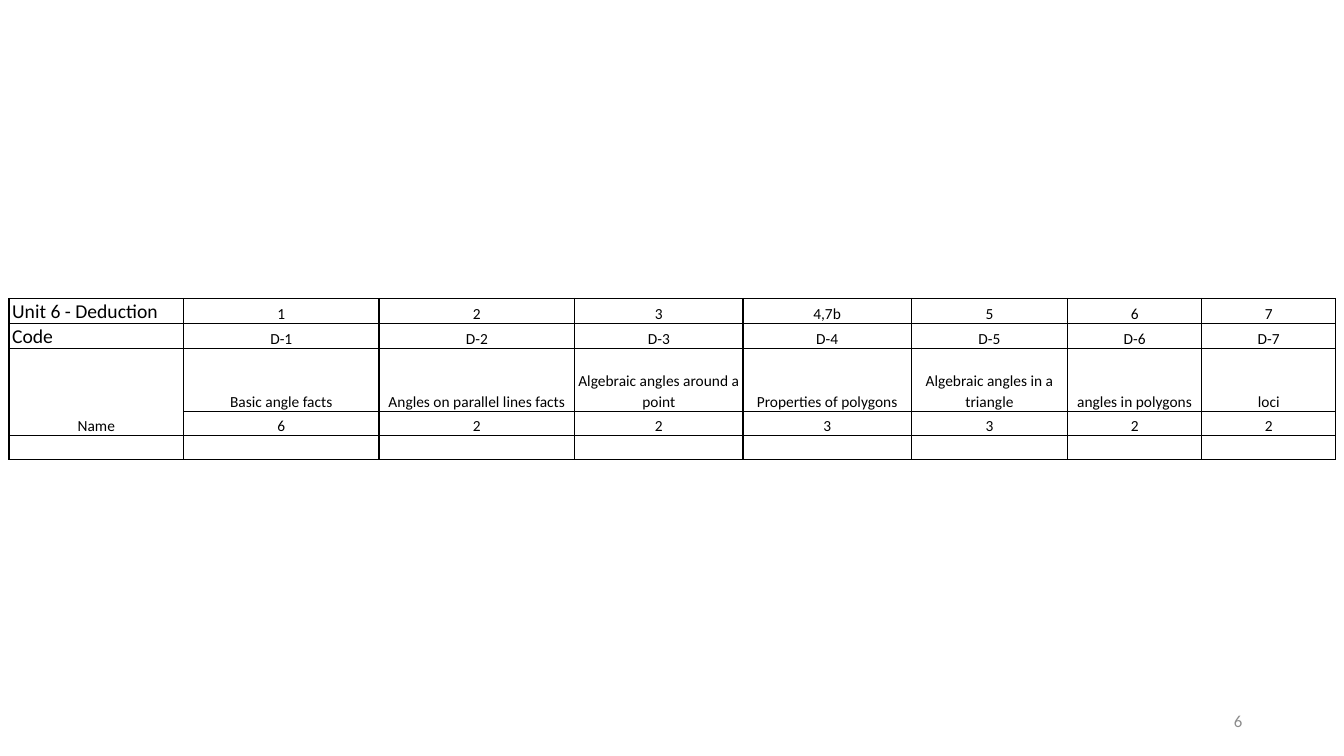
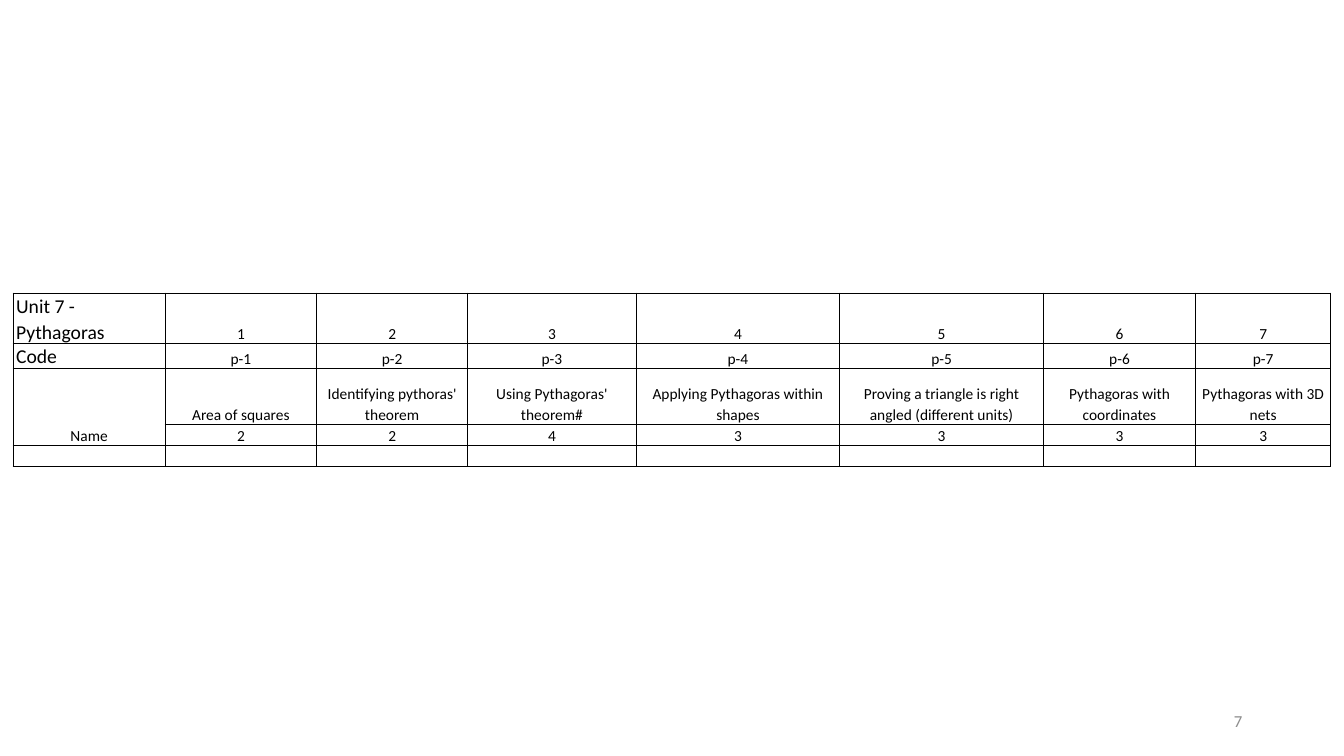
from lxml import etree
from pptx import Presentation
from pptx.dml.color import RGBColor
from pptx.enum.text import MSO_ANCHOR, PP_ALIGN
from pptx.oxml.ns import qn
from pptx.util import Inches, Pt

BLACK = RGBColor(0x00, 0x00, 0x00)
GREY = RGBColor(0x8C, 0x8C, 0x8C)
FONT = "Calibri"
LEFT, CENTER, RIGHT = PP_ALIGN.LEFT, PP_ALIGN.CENTER, PP_ALIGN.RIGHT
MIDDLE, BOTTOM = MSO_ANCHOR.MIDDLE, MSO_ANCHOR.BOTTOM
BORDER_SIDES = ("a:lnL", "a:lnR", "a:lnT", "a:lnB")
NAME_ROW = 2

UNITS = [
    {
        "page": 6, "at": (0.09, 2.96), "title": "Unit 6 - Deduction", "prefix": "D",
        "widths": [1.73, 1.94, 1.94, 1.67, 1.67, 1.55, 1.33, 1.33],
        "heights": [0.24, 0.24, 0.62, 0.24, 0.24],
        "lessons": ["1", "2", "3", "4,7b", "5", "6", "7"],
        "topics": [
            ("Basic angle facts", 6),
            ("Angles on parallel lines facts", 2),
            ("Algebraic angles around a point", 2),
            ("Properties of polygons", 3),
            ("Algebraic angles in a triangle", 3),
            ("angles in polygons", 2),
            ("loci", 2),
        ],
    },
    {
        "page": 7, "at": (0.13, 2.91), "title": "Unit 7 - Pythagoras", "prefix": "p",
        "widths": [1.51, 1.5, 1.5, 1.67, 2.02, 2.02, 1.51, 1.34],
        "heights": [0.21, 0.23, 0.55, 0.21, 0.21],
        "lessons": ["1", "2", "3", "4", "5", "6", "7"],
        "topics": [
            ("Area of squares", 2),
            ("Identifying pythoras' theorem", 2),
            ("Using Pythagoras' theorem#", 4),
            ("Applying Pythagoras within shapes", 3),
            ("Proving a triangle is right angled (different units)", 3),
            ("Pythagoras with coordinates", 3),
            ("Pythagoras with 3D nets", 3),
        ],
    },
]


class Deck:
    def __init__(self):
        self.prs = Presentation()
        self.prs.slide_width, self.prs.slide_height = Inches(13.33), Inches(7.5)
        self.s = None

    def add_slide(self):
        self.s = self.prs.slides.add_slide(self.prs.slide_layouts[6])

    def style(self, p, size, color, align):
        p.alignment = align
        p.font.name = FONT
        p.font.size = Pt(size)
        p.font.color.rgb = color

    def page_number(self, number):
        sp = self.s.shapes.add_textbox(Inches(9.42), Inches(6.95), Inches(3), Inches(0.4))
        tf = sp.text_frame
        tf.word_wrap = True
        tf.vertical_anchor = MIDDLE
        tf.text = str(number)
        self.style(tf.paragraphs[0], 12, GREY, RIGHT)

    def borders(self, cell):
        tc_pr = cell._tc.get_or_add_tcPr()
        for i, side in enumerate(BORDER_SIDES):
            ln = etree.Element(qn(side), w=str(Pt(1)))
            fill = etree.SubElement(ln, qn("a:solidFill"))
            etree.SubElement(fill, qn("a:srgbClr"), val=str(BLACK))
            tc_pr.insert(i, ln)

    def cell(self, cell, text, heading):
        cell.fill.background()
        cell.margin_left = cell.margin_right = Inches(0.03)
        cell.margin_top = cell.margin_bottom = 0
        cell.vertical_anchor = BOTTOM
        cell.text = text
        p = cell.text_frame.paragraphs[0]
        p.line_spacing = 1.07
        self.style(p, 14 if heading else 11, BLACK, LEFT if heading else CENTER)
        self.borders(cell)

    def table(self, at, widths, heights, rows):
        left, top = at
        table = self.s.shapes.add_table(
            len(heights), len(widths), Inches(left), Inches(top),
            Inches(sum(widths)), Inches(sum(heights))).table
        table.first_row = table.horz_banding = False
        for column, width in zip(table.columns, widths):
            column.width = Inches(width)
        for row, height in zip(table.rows, heights):
            row.height = Inches(height)
        for r, texts in enumerate(rows):
            for c, text in enumerate(texts):
                self.cell(table.cell(r, c), text, c == 0 and r < NAME_ROW)
        table.cell(NAME_ROW, 0).merge(table.cell(NAME_ROW + 1, 0))

    def unit(self, unit):
        """Add a slide with the lesson table of one unit."""
        topics = unit["topics"]
        rows = [
            [unit["title"], *unit["lessons"]],
            ["Code", *(f"{unit['prefix']}-{i}" for i in range(1, len(topics) + 1))],
            ["Name", *(name for name, _ in topics)],
            ["", *(str(count) for _, count in topics)],
            [""] * (len(topics) + 1),
        ]
        self.add_slide()
        self.page_number(unit["page"])
        self.table(unit["at"], unit["widths"], unit["heights"], rows)


def main():
    deck = Deck()
    for unit in UNITS:
        deck.unit(unit)
    deck.prs.save("out.pptx")


if __name__ == "__main__":
    main()
